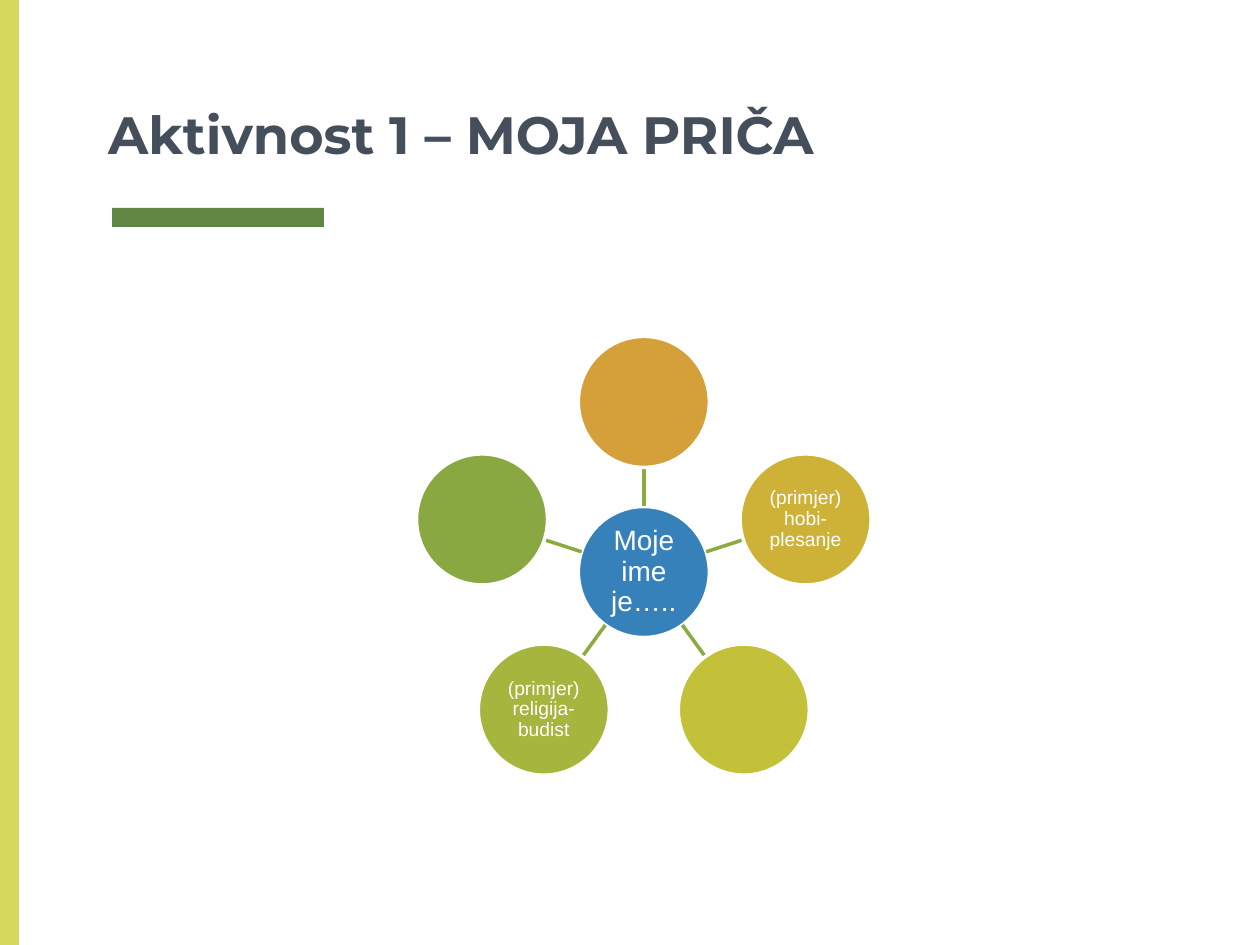
from math import cos, pi, sin

from lxml.etree import SubElement
from pptx import Presentation
from pptx.dml.color import RGBColor
from pptx.enum.shapes import MSO_CONNECTOR, MSO_SHAPE
from pptx.enum.text import MSO_ANCHOR, PP_ALIGN
from pptx.oxml.ns import qn
from pptx.util import Inches, Pt


def rgb(value):
    return RGBColor.from_string(value)


def add_filled(kind, left, top, width, height, color):
    shape = slide.shapes.add_shape(
        kind, Inches(left), Inches(top), Inches(width), Inches(height))
    shape.shadow.inherit = False
    shape.fill.solid()
    shape.fill.fore_color.rgb = rgb(color)
    shape.line.fill.background()
    return shape


prs = Presentation()
prs.slide_width, prs.slide_height = Inches(10), Inches(7.5)
slide = prs.slides.add_slide(prs.slide_layouts[6])

# Accent bars and title
add_filled(MSO_SHAPE.RECTANGLE, 0.89, 1.65, 1.68, 0.15, "608643")
add_filled(MSO_SHAPE.RECTANGLE, 0, 0, 0.15, 7.5, "D5D85A")

title = slide.shapes.add_textbox(Inches(0.76), 0, Inches(8.49), Inches(1.41)).text_frame
title.word_wrap = True
title.vertical_anchor = MSO_ANCHOR.BOTTOM
title.margin_left = title.margin_right = Inches(0.1)
title.margin_top = title.margin_bottom = Inches(0.1)
heading = title.paragraphs[0].add_run()
heading.text = "Aktivnost 1 – MOJA PRIČA"
heading.font.name = "Montserrat"
heading.font.size = Pt(30)
heading.font.bold = True
heading.font.color.rgb = rgb("454F5B")

# Radial diagram: a hub, with five circles clockwise from the top
HUB_X, HUB_Y = 5.11, 4.54
DIAMETER = 1.04
ORBIT = 1.35
circles = [
    ("3781BA", "Moje ime je…..", 16),
    ("D59F39", "", 11),
    ("CEB137", "(primjer) hobi- plesanje", 11),
    ("C3C039", "", 11),
    ("A5B53E", "(primjer) religija- budist", 11),
    ("89A842", "", 11),
]

for position, (color, label, size) in enumerate(circles):
    x, y = HUB_X, HUB_Y
    if position > 0:
        angle = 2 * pi * (position - 1) / 5
        dx, dy = sin(angle), -cos(angle)
        x, y = HUB_X + ORBIT * dx, HUB_Y + ORBIT * dy
        near, far = DIAMETER / 2, ORBIT - DIAMETER / 2
        spoke = slide.shapes.add_connector(
            MSO_CONNECTOR.STRAIGHT,
            Inches(HUB_X + near * dx), Inches(HUB_Y + near * dy),
            Inches(HUB_X + far * dx), Inches(HUB_Y + far * dy))
        spoke.line.color.rgb = rgb("8BAB41")
        spoke.line.width = Pt(2)
        SubElement(spoke._element.spPr, qn("a:effectLst"))

    circle = add_filled(MSO_SHAPE.OVAL, x - DIAMETER / 2, y - DIAMETER / 2,
                        DIAMETER, DIAMETER, color)
    circle.line.color.rgb = rgb("FFFFFF")
    circle.line.width = Pt(2)
    if label:
        frame = circle.text_frame
        frame.word_wrap = True
        frame.vertical_anchor = MSO_ANCHOR.MIDDLE
        frame.margin_left = frame.margin_right = Inches(0.01)
        frame.margin_top = frame.margin_bottom = Inches(0.01)
        paragraph = frame.paragraphs[0]
        paragraph.alignment = PP_ALIGN.CENTER
        paragraph.line_spacing = 0.9
        run = paragraph.add_run()
        run.text = label
        run.font.name = "Arial"
        run.font.size = Pt(size)
        run.font.color.rgb = rgb("FFFFFF")

prs.save("out.pptx")
